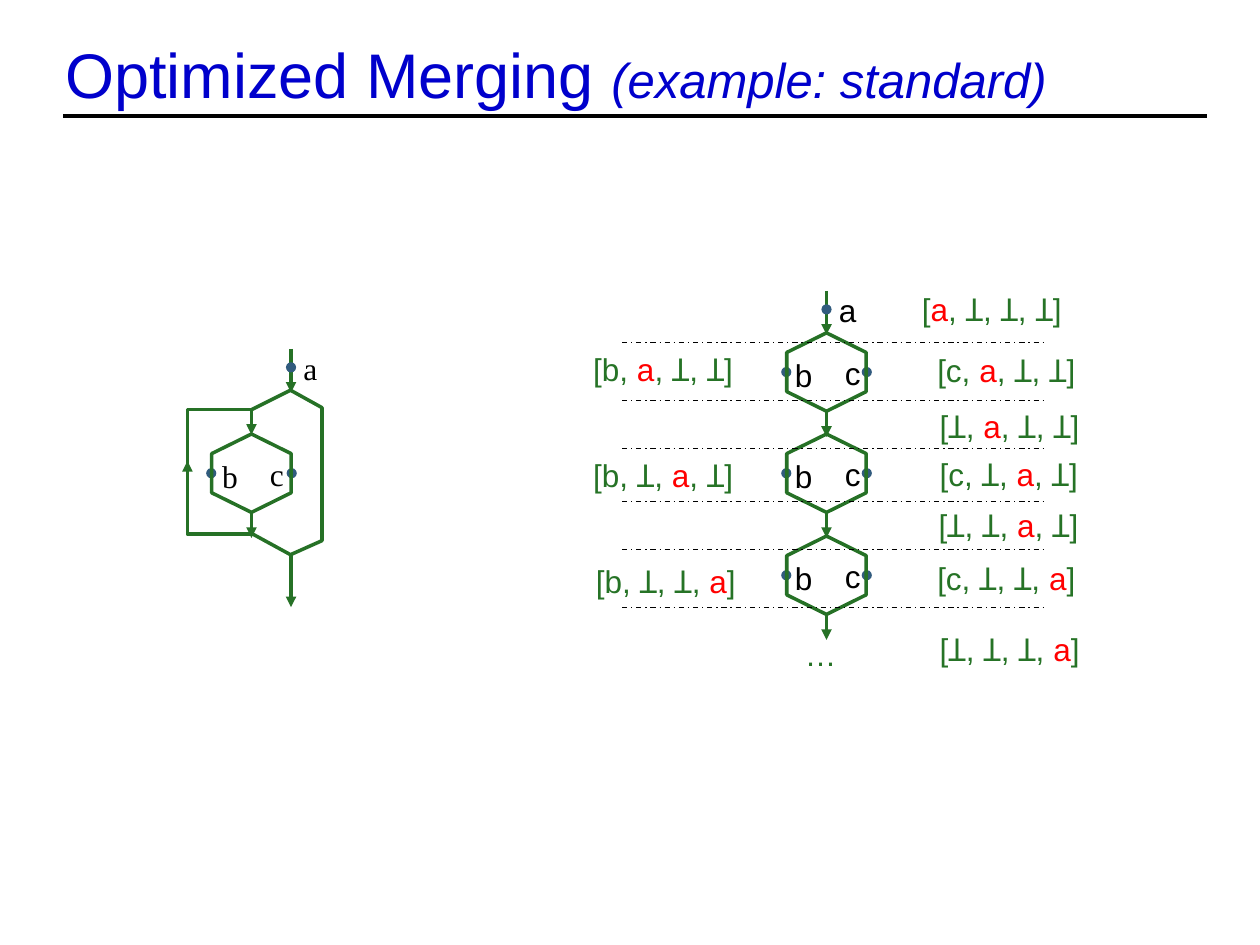
from dataclasses import dataclass

import pptx
import pptx.dml.color
import pptx.enum.dml
import pptx.enum.shapes
import pptx.enum.text
import pptx.oxml.ns
import pptx.util
from lxml import etree

Pt = pptx.util.Pt
SHAPE = pptx.enum.shapes.MSO_SHAPE
GREEN, TEXT_GREEN, DOT_BLUE = "267126", "267326", "315B7E"
BLACK, RED, TITLE_BLUE = "000000", "FF0000", "0000CC"
SERIF, SANS = "Times New Roman", "Arial"


@dataclass
class Run:
    text: str
    color: str = BLACK
    size: float = 18
    font: str = SANS
    italic: bool = False


@dataclass
class Branch:
    """Hexagon with program points b and c, and the arrow leaving it."""
    cx: float
    cy: float
    font: str = SANS
    b_dx: float = -25.2


@dataclass
class Vector:
    """Bracketed state; the letter a in it is highlighted."""
    text: str
    x: float
    y: float
    w: float


prs = pptx.Presentation()
prs.slide_width, prs.slide_height = Pt(720), Pt(540)
s = prs.slides.add_slide(prs.slide_layouts[6])


def rgb(color: str) -> pptx.dml.color.RGBColor:
    return pptx.dml.color.RGBColor.from_string(color)


def add_text(x: float, y: float, w: float, h: float, runs: list[Run], wrap: bool = False):
    sp = s.shapes.add_textbox(Pt(x), Pt(y), Pt(w), Pt(h))
    tf = sp.text_frame
    tf.word_wrap = wrap
    p = tf.paragraphs[0]
    for run in runs:
        r = p.add_run()
        r.text = run.text
        r.font.name, r.font.size, r.font.italic = run.font, Pt(run.size), run.italic
        r.font.color.rgb = rgb(run.color)
    return tf


def add_label(x: float, y: float, text: str, font: str) -> None:
    add_text(x, y, 22.3 if font == SERIF else 24.2, 28.8, [Run(text, font=font)])


def add_line(x1: float, y1: float, x2: float, y2: float, color: str = GREEN,
             width: float = 2, arrow: bool = False, dashed: bool = False) -> None:
    cn = s.shapes.add_connector(pptx.enum.shapes.MSO_CONNECTOR.STRAIGHT,
                                Pt(x1), Pt(y1), Pt(x2), Pt(y2))
    cn.line.color.rgb, cn.line.width = rgb(color), Pt(width)
    if dashed:
        cn.line.dash_style = pptx.enum.dml.MSO_LINE.DASH_DOT
    qn = pptx.oxml.ns.qn
    if arrow:
        etree.SubElement(cn.line._get_or_add_ln(), qn("a:tailEnd"), type="triangle")
    etree.SubElement(cn._element.spPr, qn("a:effectLst"))


def outline(sp) -> None:
    sp.shadow.inherit = False
    sp.fill.background()
    sp.line.color.rgb, sp.line.width = rgb(GREEN), Pt(2)


def add_path(points: list[tuple[float, float]]) -> None:
    fb = s.shapes.build_freeform(*points[0], scale=Pt(1))
    fb.add_line_segments(points[1:], close=False)
    outline(fb.convert_to_shape())


def add_dot(cx: float, cy: float) -> None:
    sp = s.shapes.add_shape(SHAPE.OVAL, Pt(cx - 2.9), Pt(cy - 2.9), Pt(5.8), Pt(5.8))
    sp.shadow.inherit = False
    sp.fill.solid()
    sp.fill.fore_color.rgb = rgb(DOT_BLUE)
    sp.line.fill.background()


def add_entry(x: float, top: float, font: str) -> None:
    add_line(x, top, x, top + 25, arrow=True)
    add_dot(x, top + 10.5)
    add_label(x, top - 3.6, "a", font)


def add_branch(br: Branch) -> None:
    add_label(br.cx + br.b_dx, br.cy - 12.6, "b", br.font)
    for dx in (-23, 23):
        add_dot(br.cx + dx, br.cy)
    sp = s.shapes.add_shape(SHAPE.HEXAGON, Pt(br.cx - 22.4), Pt(br.cy - 22.7),
                            Pt(44.8), Pt(45.4))
    sp.rotation = 270
    outline(sp)
    add_line(br.cx, br.cy + 22.5, br.cx, br.cy + 37, arrow=True)
    add_label(br.cx + 3.4, br.cy - 13.8, "c", br.font)


def add_vector(v: Vector) -> None:
    before, letter, after = v.text.partition("a")
    add_text(v.x, v.y, v.w, 28.8, [Run(before, TEXT_GREEN), Run(letter, RED),
                                   Run(after, TEXT_GREEN)])


# Title and rule
add_line(36, 66.2, 689.8, 66.2, BLACK)
tf = add_text(30.2, 12.2, 666, 59.8, [
    Run("Optimized Merging ", TITLE_BLUE, 36),
    Run("(example: standard)", TITLE_BLUE, 28, italic=True)], wrap=True)
tf.vertical_anchor = pptx.enum.text.MSO_ANCHOR.MIDDLE

# Left: loop graph
loop_x, main_x, back_x, skip_x = 143.7, 166.3, 107.1, 184.3
head_y, tail_y = 234, 305.4
add_branch(Branch(loop_x, 270.4, SERIF, -23.8))
add_entry(main_x, 199.4, SERIF)
add_line(loop_x, head_y, loop_x, 248.4, arrow=True)
add_path([(loop_x, head_y), (back_x, head_y), (back_x, tail_y), (loop_x, tail_y)])
add_line(back_x, 278.6, back_x, 263.5, arrow=True)
add_path([(loop_x, 234.4), (main_x, 223.2), (skip_x, 232.6), (skip_x, 309.2),
          (main_x, 316.8), (loop_x, tail_y)])
add_line(main_x, 316.8, main_x, 347, arrow=True)

# Right: unrolled loop
unrolled_x = 472.3
for cy in (212.6, 270.4, 328.7):
    add_branch(Branch(unrolled_x, cy))
add_entry(unrolled_x, 166.3, SANS)

# Dividers between program points
for y in (195.8, 229, 256.3, 286.6, 313.9, 347):
    add_line(355.5, y, 596.7, y, BLACK, 0.75, dashed=True)

# State vectors
for vector in (
    Vector("[a, Ʇ, Ʇ, Ʇ]", 519.8, 162, 98.6),
    Vector("[c, a, Ʇ, Ʇ]", 528.5, 197.3, 96.8),
    Vector("[b, a, Ʇ, Ʇ]", 331.9, 196.6, 97.2),
    Vector("[Ʇ, a, Ʇ, Ʇ]", 529.9, 229, 98.6),
    Vector("[c, Ʇ, a, Ʇ]", 529.9, 256.3, 96.8),
    Vector("[b, Ʇ, a, Ʇ]", 331.9, 257, 97.2),
    Vector("[Ʇ, Ʇ, a, Ʇ]", 529.2, 285.8, 99.4),
    Vector("[c, Ʇ, Ʇ, a]", 528.5, 316.1, 97.2),
    Vector("[b, Ʇ, Ʇ, a]", 333.4, 317.5, 98.6),
    Vector("[Ʇ, Ʇ, Ʇ, a]", 529.9, 356.4, 99.4),
):
    add_vector(vector)
add_text(452.9, 359.3, 32.4, 28.8, [Run("…", TEXT_GREEN)])

prs.save("out.pptx")
